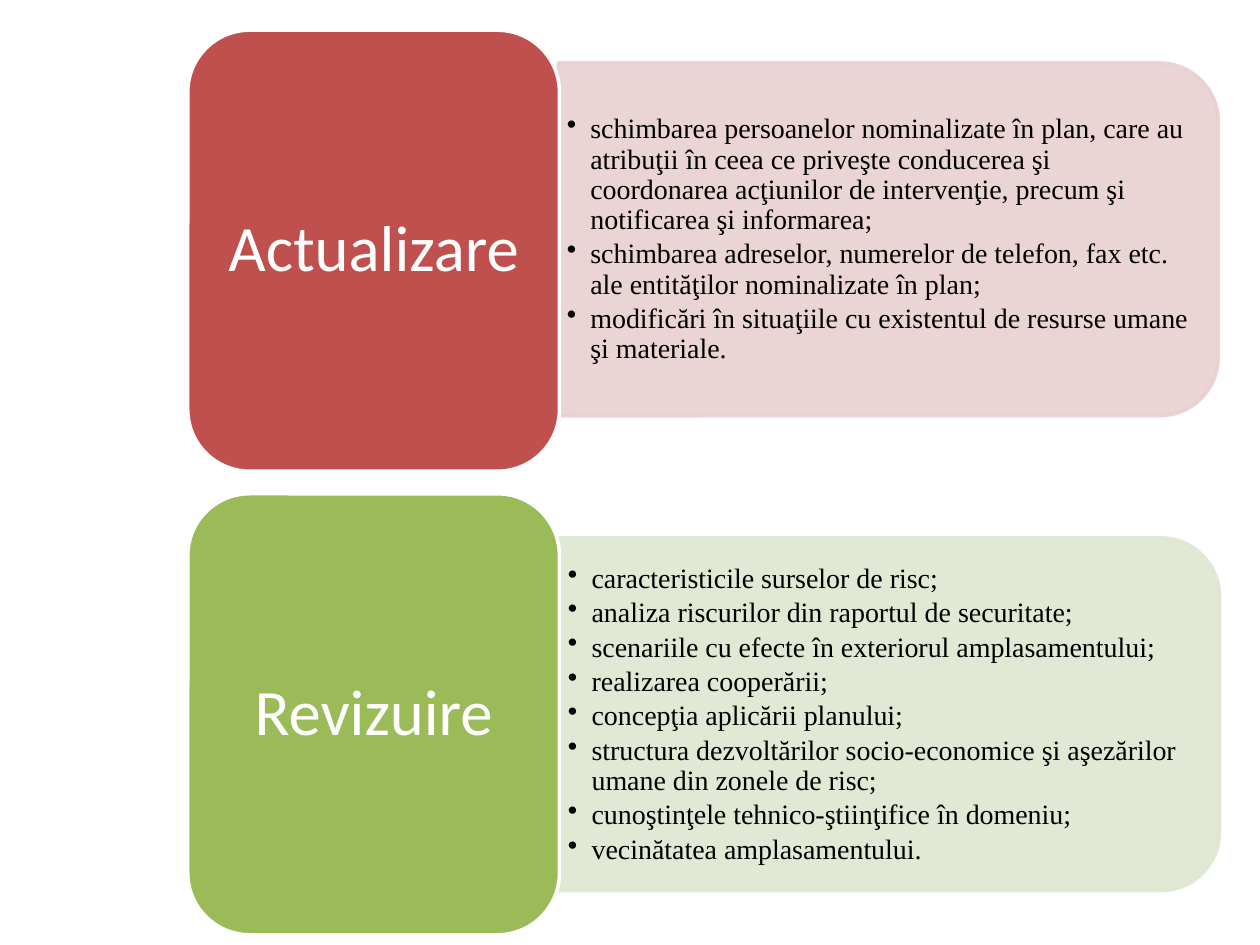
from lxml import etree
from pptx import Presentation
from pptx.dml.color import RGBColor
from pptx.enum.shapes import MSO_SHAPE as SHAPE
from pptx.enum.text import MSO_ANCHOR as ANCHOR, PP_ALIGN as ALIGN
from pptx.oxml.ns import qn
from pptx.util import Pt

WHITE = RGBColor(0xFF, 0xFF, 0xFF)
BLACK = RGBColor(0x00, 0x00, 0x00)
RED = RGBColor(0xC0, 0x50, 0x4D)
PALE_RED = RGBColor(0xE8, 0xD0, 0xD0)
GREEN = RGBColor(0x9B, 0xBB, 0x59)
PALE_GREEN = RGBColor(0xDE, 0xE7, 0xD1)

SECTIONS = [
    ("Actualizare", RED, PALE_RED, [
        "schimbarea persoanelor nominalizate în plan, care au atribuţii în ceea ce "
        "priveşte conducerea şi coordonarea acţiunilor de intervenţie, precum şi "
        "notificarea şi informarea;",
        "schimbarea adreselor, numerelor de telefon, fax etc. ale entităţilor "
        "nominalizate în plan;",
        "modificări în situaţiile cu existentul de resurse umane şi materiale.",
    ]),
    ("Revizuire", GREEN, PALE_GREEN, [
        "caracteristicile surselor de risc;",
        "analiza riscurilor din raportul de securitate;",
        "scenariile cu efecte în exteriorul amplasamentului;",
        "realizarea cooperării;",
        "concepţia aplicării planului;",
        "structura dezvoltărilor socio-economice şi aşezărilor umane din zonele de risc;",
        "cunoştinţele tehnico-ştiinţifice în domeniu;",
        "vecinătatea amplasamentului.",
    ]),
]

prs = Presentation()
prs.slide_width, prs.slide_height = Pt(720), Pt(540)
s = prs.slides.add_slide(prs.slide_layouts[6])


def add_block(shape, box, fill, line, opacity=100):
    sp = s.shapes.add_shape(shape, *map(Pt, box))
    sp.shadow.inherit = False
    sp.fill.solid()
    sp.fill.fore_color.rgb = fill
    sp.line.color.rgb = line
    sp.line.width = Pt(2)
    if opacity < 100:
        for clr in sp._element.spPr.iter(qn("a:srgbClr")):
            etree.SubElement(clr, qn("a:alpha"), val=str(opacity * 1000))
    return sp


def add_text(lines, box, size, font, color, align, margins, after, bullet=False):
    tf = s.shapes.add_textbox(*map(Pt, box)).text_frame
    tf.word_wrap = True
    tf.vertical_anchor = ANCHOR.MIDDLE
    tf.margin_left = tf.margin_right = Pt(margins[0])
    tf.margin_top = tf.margin_bottom = Pt(margins[1])
    for i, line in enumerate(lines):
        p = tf.paragraphs[0] if i == 0 else tf.add_paragraph()
        p.alignment = align
        p.line_spacing = 0.9
        p.space_after = Pt(after)
        if bullet:
            p.level = 1
            pPr = p._p.get_or_add_pPr()
            pPr.set("marL", str(Pt(13.5)))
            pPr.set("indent", str(-Pt(13.5)))
            etree.SubElement(pPr, qn("a:buChar"), char="•")
        r = p.add_run()
        r.text = line
        r.font.size, r.font.name = Pt(size), font
        r.font.color.rgb = color


CARD_X, CARD_W, CARD_H = 107.3, 212.4, 252
PANEL_W, PANEL_H = 377.3, 201.6

for i, (name, color, pale, items) in enumerate(SECTIONS):
    card_y = 17.3 + 264.9 * i
    panel_x = 318.9 + 0.7 * i
    panel_y = 36 + 271.4 * i

    # Pale panel: a shape with two round corners, turned to face right
    turn = (PANEL_W - PANEL_H) / 2
    panel = add_block(SHAPE.ROUND_2_SAME_RECTANGLE,
                      (panel_x + turn, panel_y - turn, PANEL_H, PANEL_W),
                      pale, pale, opacity=90)
    panel.rotation = 90
    add_text(items, (panel_x, panel_y + 10, 367.2, 182), size=16,
             font="Times New Roman", color=BLACK, align=ALIGN.LEFT,
             margins=(5, 2.5), after=2.4, bullet=True)

    # Card with the section name
    add_block(SHAPE.ROUNDED_RECTANGLE, (CARD_X, card_y, CARD_W, CARD_H), color, WHITE)
    add_text([name], (CARD_X + 10.4, card_y + 10.4, CARD_W - 20.8, CARD_H - 20.8),
             size=37, font="Calibri", color=WHITE, align=ALIGN.CENTER,
             margins=(10.8, 5.5), after=13)

prs.save("out.pptx")
